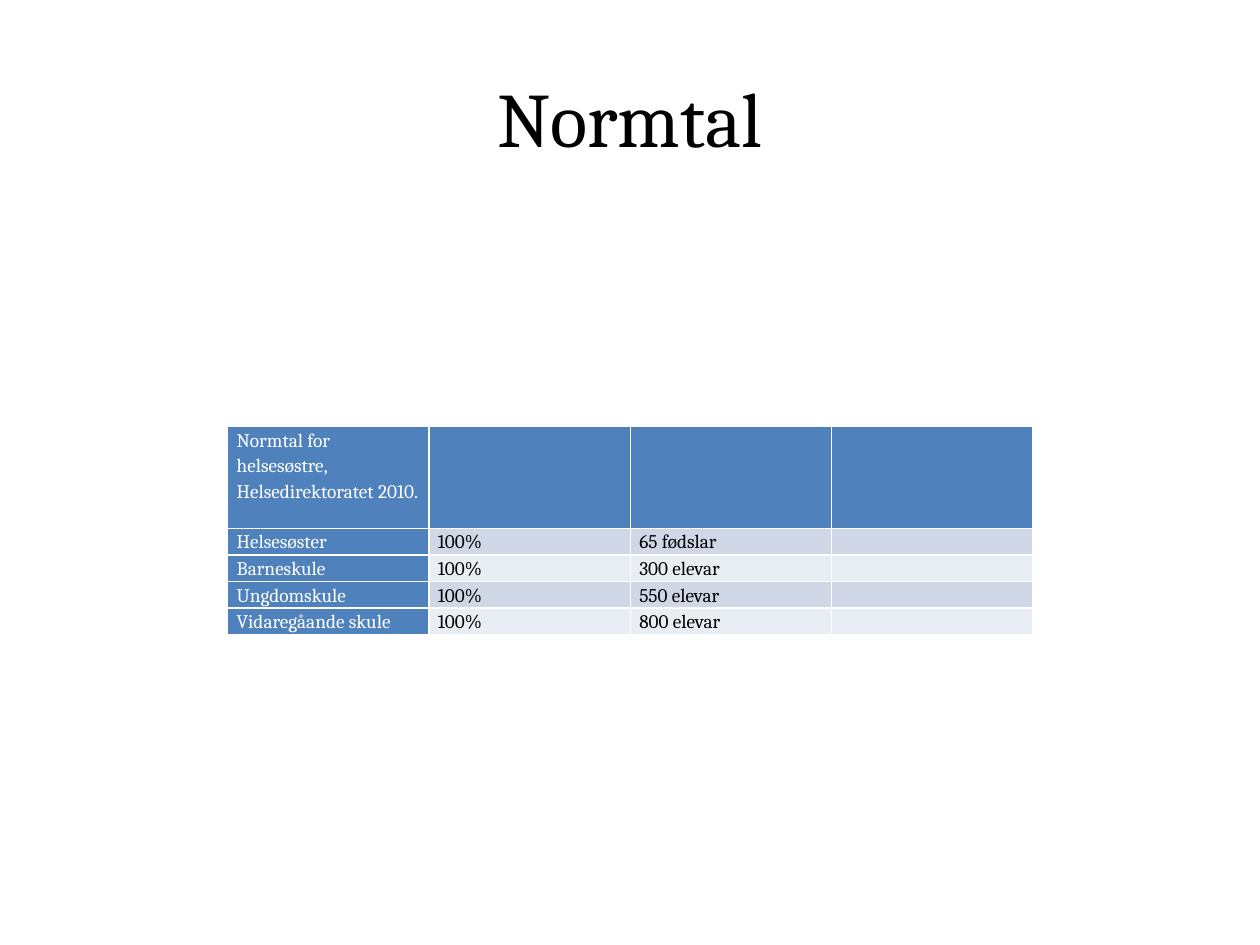
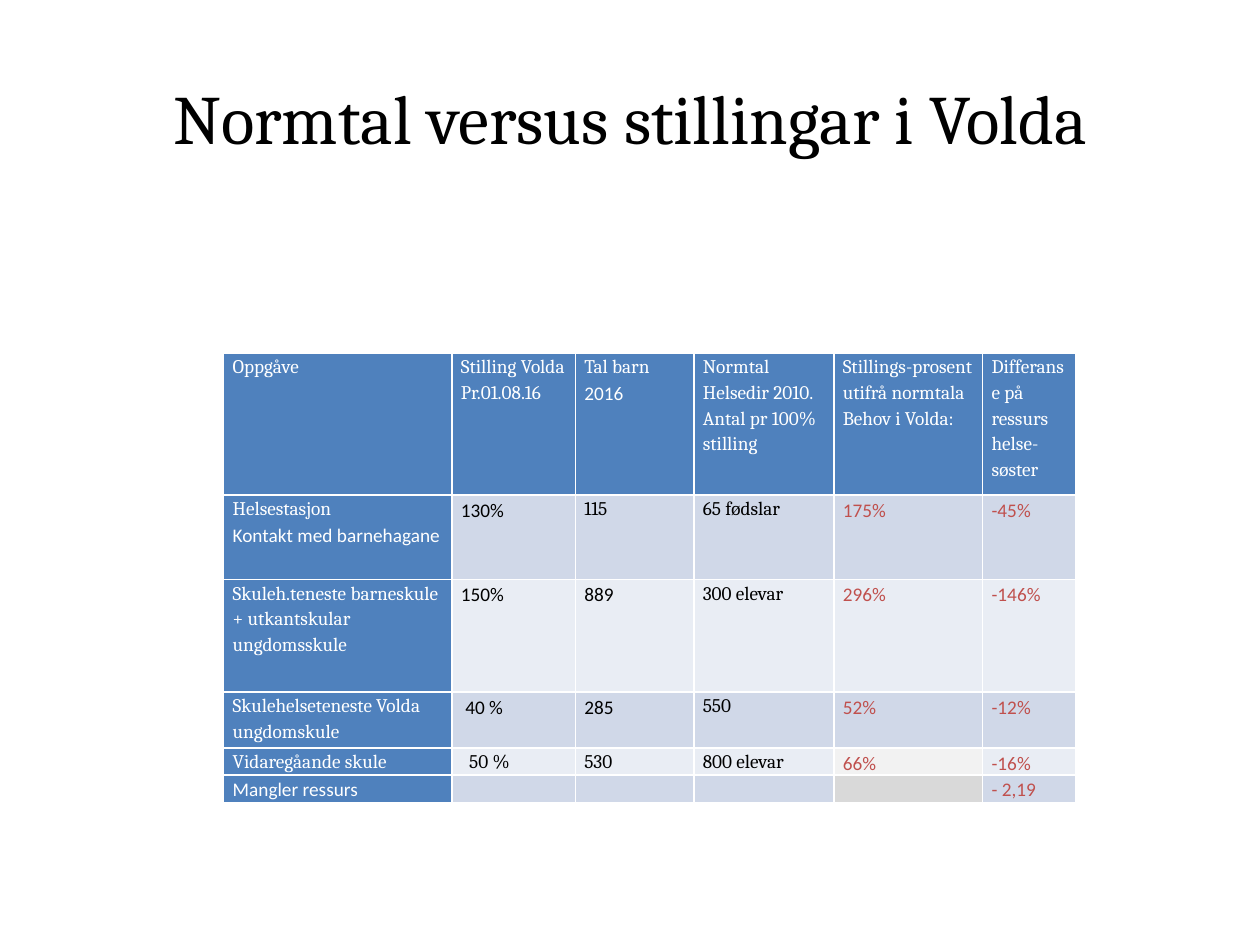
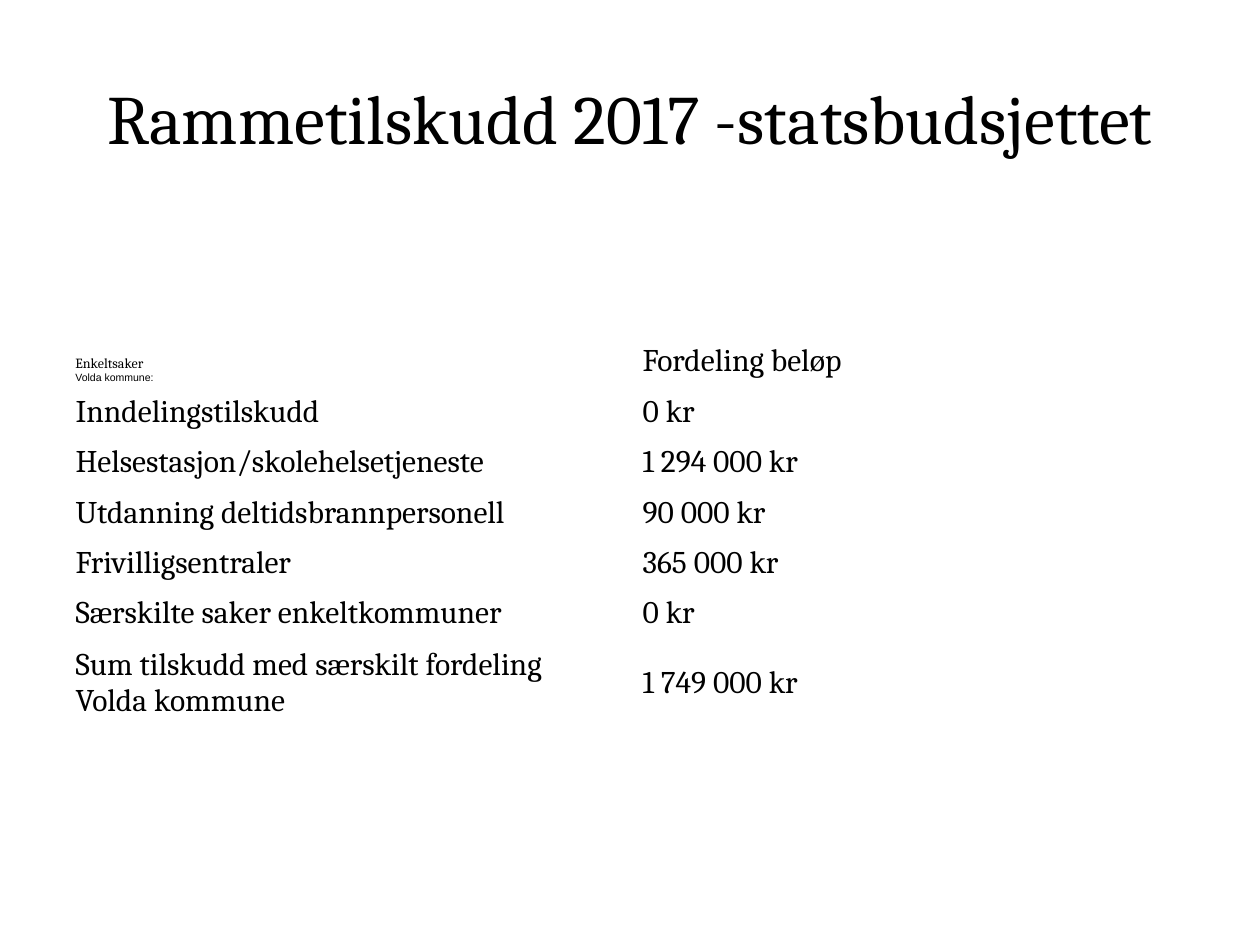
import lxml.etree
import pptx
import pptx.dml.color
import pptx.enum.text
import pptx.oxml.ns
import pptx.util

Cm = pptx.util.Cm
SERIF, SANS = "Cambria", "Calibri"
BLACK, WHITE, RED = "000000", "FFFFFF", "C0504D"
BLUE, BANDS = "4F81BD", ("D0D8E8", "E9EDF4")
MID = pptx.enum.text.MSO_ANCHOR.MIDDLE
TOP = pptx.enum.text.MSO_ANCHOR.TOP


def color(code):
    return pptx.dml.color.RGBColor.from_string(code)


def child(parent, tag, **attrs):
    return lxml.etree.SubElement(parent, pptx.oxml.ns.qn("a:" + tag), **attrs)


class Deck:
    def __init__(self):
        self.file = pptx.Presentation()
        self.file.slide_width, self.file.slide_height = Cm(25.4), Cm(19.05)
        self.slide = None

    def page(self, title, size):
        self.slide = self.file.slides.add_slide(self.file.slide_layouts[6])
        par = self.box(1.27, 0.76, 22.86, 3.18, [(title, size, SERIF)])
        par.alignment = pptx.enum.text.PP_ALIGN.CENTER

    def style(self, par, text, size, font=SERIF, ink=BLACK):
        par.text = text
        par.font.size = pptx.util.Pt(size)
        par.font.name = font
        par.font.color.rgb = color(ink)

    def box(self, left, top, width, height, lines):
        """Add centred-height text and return its last paragraph."""
        frame = self.slide.shapes.add_textbox(
            Cm(left), Cm(top), Cm(width), Cm(height)).text_frame
        frame.word_wrap = True
        frame.vertical_anchor = MID
        for i, line in enumerate(lines):
            par = frame.add_paragraph() if i else frame.paragraphs[0]
            self.style(par, *line)
        return par

    def table(self, left, top, cols, rows):
        table = self.slide.shapes.add_table(
            len(rows), len(cols), Cm(left), Cm(top),
            Cm(sum(cols)), Cm(sum(rows))).table
        table.first_row = table.horz_banding = False
        for col, width in zip(table.columns, cols):
            col.width = Cm(width)
        for row, height in zip(table.rows, rows):
            row.height = Cm(height)
        return table

    def edge(self, cell):
        props = cell._tc.get_or_add_tcPr()
        for side in ("lnL", "lnR", "lnT", "lnB"):
            line = child(props, side, w="12700")
            child(child(line, "solidFill"), "srgbClr", val=WHITE)

    def grid(self, left, top, cols, rows, data, sans=(), reds=(), fills={}, pads={}):
        """Add a banded table with a blue first row and first column."""
        table = self.table(left, top, cols, rows)
        for r, row in enumerate(data):
            for c, text in enumerate(row):
                cell = table.cell(r, c)
                head = r == 0 or c == 0
                self.edge(cell)
                cell.fill.solid()
                band = BLUE if head else BANDS[(r - 1) % 2]
                cell.fill.fore_color.rgb = color(fills.get((r, c), band))
                cell.margin_left = Cm(0.18 + pads.get((r, c), 0))
                cell.margin_right = Cm(0.18)
                cell.margin_top = cell.margin_bottom = 0
                cell.vertical_anchor = TOP
                ink = WHITE if head else RED if c in reds else BLACK
                frame = cell.text_frame
                for i, line in enumerate(text.split("\n")):
                    par = frame.add_paragraph() if i else frame.paragraphs[0]
                    font = SANS if line in sans else SERIF
                    self.style(par, line, 11, font, ink)
                    par.line_spacing = 1.15
                    if not line:
                        child(par._p, "endParaRPr", sz="1100")

    def plain(self, left, top, cols, rows, data):
        """Add a table without fills."""
        table = self.table(left, top, cols, rows)
        for r, row in enumerate(data):
            for c, text in enumerate(row):
                cell = table.cell(r, c)
                cell.fill.background()
                cell.vertical_anchor = MID
                self.style(cell.text_frame.paragraphs[0], text, 18)


def main():
    deck = Deck()

    # Norms
    deck.page("Normtal", 44)
    deck.grid(4.59, 8.6, [4.06] * 4, [2.05] + [0.52] * 4, [
        ("Normtal for helsesøstre, Helsedirektoratet 2010.", "", "", ""),
        ("Helsesøster", "100%", "65 fødslar", ""),
        ("Barneskule", "100%", "300 elevar", ""),
        ("Ungdomskule", "100%", "550 elevar", ""),
        ("Vidaregåande skule", "100%", "800 elevar", ""),
    ])

    # Norms against posts
    deck.page("Normtal versus stillingar i Volda", 39.6)
    tasks = [
        ("Oppgåve", "Stilling Volda\nPr.01.08.16", "Tal barn\n2016",
         "Normtal Helsedir 2010.\nAntal pr 100% stilling",
         "Stillings-prosent utifrå normtala\nBehov i Volda:",
         "Differanse på ressurs helse-søster"),
        ("Helsestasjon\nKontakt med barnehagane", "130%", "115",
         "65 fødslar", "175%", "-45%"),
        ("Skuleh.teneste barneskule + utkantskular ungdomsskule", "150%",
         "889", "300 elevar", "296%", "-146%"),
        ("Skulehelseteneste Volda ungdomskule", "40 %", "285", "550",
         "52%", "-12%"),
        ("Vidaregåande skule", "50 %", "530", "800 elevar", "66%", "-16%"),
        ("Mangler ressurs", "", "", "", "", "- 2,19"),
    ]
    sans = {"2016", "Kontakt med barnehagane", "130%", "150%", "889",
            "40 %", "285", "Mangler ressurs"}
    sans.update(text for row in tasks[1:] for text in row[4:])
    deck.grid(4.51, 7.12, [4.6, 2.49, 2.39, 2.82, 3, 1.88],
              [2.86, 1.7, 2.27, 1.13, 0.54, 0.57], tasks, sans, reds=(4, 5),
              fills={(4, 4): "F2F2F2", (5, 4): "D9D9D9"},
              pads={(3, 1): 0.09, (4, 1): 0.17})

    # State grant
    deck.page("Rammetilskudd 2017 -statsbudsjettet", 39.6)
    deck.plain(1.27, 6.78, [11.43] * 2, [0.99] * 6 + [1.75], [
        ("", "Fordeling beløp"),
        ("Inndelingstilskudd", "0 kr"),
        ("Helsestasjon/skolehelsetjeneste", "1 294 000 kr"),
        ("Utdanning deltidsbrannpersonell", "90 000 kr"),
        ("Frivilligsentraler", "365 000 kr"),
        ("Særskilte saker enkeltkommuner", "0 kr"),
        ("Sum tilskudd med særskilt fordeling Volda kommune", "1 749 000 kr"),
    ])
    deck.box(1.27, 7.01, 10.82, 0.86, [
        ("Enkeltsaker", 8, SERIF), ("Volda kommune:", 6, "Arial")])

    deck.file.save("out.pptx")


if __name__ == "__main__":
    main()
